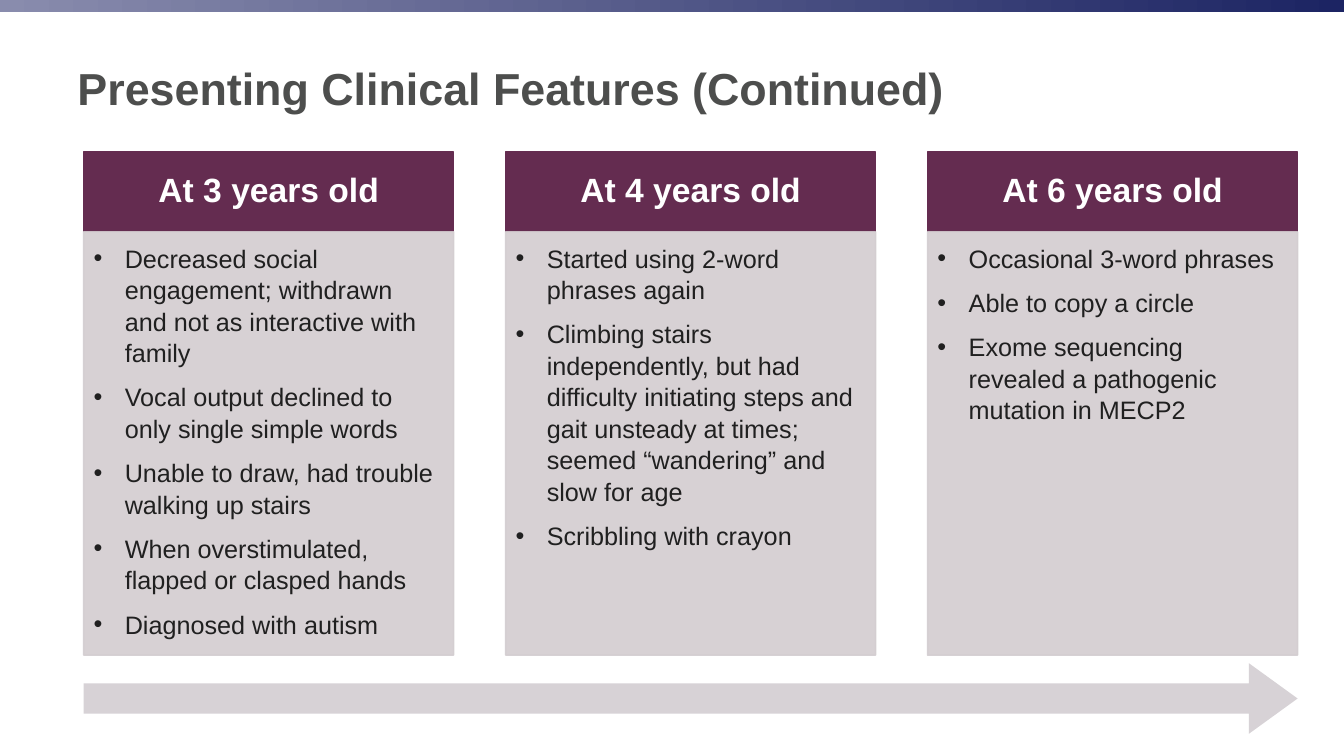
from lxml import etree
from pptx import Presentation
from pptx import util as u
from pptx.dml.color import RGBColor
from pptx.enum import shapes, text
from pptx.oxml.ns import qn

NAVY = RGBColor(0x1C, 0x24, 0x63)
LAVENDER = RGBColor(0x89, 0x8C, 0xAD)
TITLE_GREY = RGBColor(0x4D, 0x4E, 0x4D)
PLUM = RGBColor(0x64, 0x2C, 0x50)
PANEL_GREY = RGBColor(0xD3, 0xCD, 0xD0)
ARROW_GREY = RGBColor(0xD7, 0xD2, 0xD6)
INK = RGBColor(0x20, 0x20, 0x20)
WHITE = RGBColor(0xFF, 0xFF, 0xFF)

SLIDE_WIDTH, SLIDE_HEIGHT = 13.33, 7.5
LEFT, TOP, CONTENT_WIDTH, CONTENT_HEIGHT = 0.83, 1.51, 12.04, 4.99
COLUMN_WIDTH, HEADER_HEIGHT = 3.67, 0.79

AGES = [
    ("At 3 years old", [
        "Decreased social engagement; withdrawn and not as interactive with family",
        "Vocal output declined to only single simple words",
        "Unable to draw, had trouble walking up stairs",
        "When overstimulated, flapped or clasped hands",
        "Diagnosed with autism",
    ]),
    ("At 4 years old", [
        "Started using 2-word phrases again",
        "Climbing stairs independently, but had difficulty initiating steps and "
        "gait unsteady at times; seemed “wandering” and slow for age",
        "Scribbling with crayon",
    ]),
    ("At 6 years old", [
        "Occasional 3-word phrases",
        "Able to copy a circle",
        "Exome sequencing revealed a pathogenic mutation in MECP2",
    ]),
]


def add_block(slide, kind, box, color=None, outlined=False):
    shape = slide.shapes.add_shape(kind, *(u.Inches(length) for length in box))
    shape.shadow.inherit = False
    if color is not None:
        shape.fill.solid()
        shape.fill.fore_color.rgb = color
    if outlined:
        shape.line.color.rgb = color
        shape.line.width = u.Pt(1)
    else:
        shape.line.fill.background()
    return shape


def set_frame(shape, anchor, insets):
    frame = shape.text_frame
    frame.word_wrap = True
    frame.vertical_anchor = anchor
    (frame.margin_left, frame.margin_top,
     frame.margin_right, frame.margin_bottom) = (u.Inches(inset) for inset in insets)
    return frame


def write(paragraph, words, size, color, bold=False, align=text.PP_ALIGN.LEFT):
    paragraph.text = words
    paragraph.alignment = align
    font = paragraph.font
    font.name, font.size, font.bold = "Arial", u.Pt(size), bold
    font.color.rgb = color


def add_bullet(paragraph):
    properties = paragraph._p.get_or_add_pPr()
    properties.set("marL", str(u.Inches(0.31)))
    properties.set("indent", str(-u.Inches(0.31)))
    etree.SubElement(properties, qn("a:buFont")).set("typeface", "Arial")
    bullet = etree.SubElement(properties, qn("a:buChar"))
    bullet.set("char", "•")
    # Bullet settings come before the default run properties
    defaults = properties.find(qn("a:defRPr"))
    if defaults is not None:
        properties.append(defaults)


def set_opacity(shape, percent):
    for color in shape._element.spPr.iter(qn("a:srgbClr")):
        etree.SubElement(color, qn("a:alpha")).set("val", str(percent * 1000))


def add_top_band(slide, box):
    band = add_block(slide, shapes.MSO_SHAPE.RECTANGLE, box)
    band.fill.gradient()
    band.fill.gradient_angle = 0
    for stop, color in zip(band.fill.gradient_stops, (LAVENDER, NAVY)):
        stop.color.rgb = color


def add_title(slide, box):
    title = slide.shapes.add_textbox(*(u.Inches(length) for length in box))
    frame = set_frame(title, text.MSO_ANCHOR.MIDDLE, (0.1, 0.05, 0.1, 0.05))
    write(frame.paragraphs[0], "Presenting Clinical Features (Continued)",
          32, TITLE_GREY, bold=True)


def add_age_column(slide, box, heading, findings):
    left, top, width, height = box
    rectangle = shapes.MSO_SHAPE.RECTANGLE

    # Heading
    header = add_block(slide, rectangle, (left, top, width, HEADER_HEIGHT), PLUM, True)
    frame = set_frame(header, text.MSO_ANCHOR.MIDDLE, (0.14, 0.08, 0.14, 0.08))
    write(frame.paragraphs[0], heading, 24, WHITE, True, text.PP_ALIGN.CENTER)
    frame.paragraphs[0].line_spacing = 0.9

    # Findings
    panel_box = (left, top + HEADER_HEIGHT, width, height - HEADER_HEIGHT)
    panel = add_block(slide, rectangle, panel_box, PANEL_GREY, True)
    set_opacity(panel, 90)
    frame = set_frame(panel, text.MSO_ANCHOR.TOP, (0.1, 0.1, 0.14, 0.16))
    for index, finding in enumerate(findings):
        paragraph = frame.add_paragraph() if index else frame.paragraphs[0]
        write(paragraph, finding, 18, INK)
        paragraph.line_spacing = 1.04
        paragraph.space_after = u.Pt(9.2)
        add_bullet(paragraph)


def add_columns(slide, box):
    left, top, width, height = box
    step = (width - COLUMN_WIDTH) / (len(AGES) - 1)
    for index, (heading, findings) in enumerate(AGES):
        column_box = (left + index * step, top, COLUMN_WIDTH, height)
        add_age_column(slide, column_box, heading, findings)


def add_time_arrow(slide, box):
    arrow = add_block(slide, shapes.MSO_SHAPE.RIGHT_ARROW, box, ARROW_GREY)
    arrow.adjustments[0] = 0.43
    arrow.adjustments[1] = 0.69


def main():
    presentation = Presentation()
    presentation.slide_width = u.Inches(SLIDE_WIDTH)
    presentation.slide_height = u.Inches(SLIDE_HEIGHT)
    slide = presentation.slides.add_slide(presentation.slide_layouts[6])
    add_top_band(slide, (0, 0, SLIDE_WIDTH, 0.12))
    add_title(slide, (0.67, 0.22, 11.75, 1.3))
    add_columns(slide, (LEFT, TOP, CONTENT_WIDTH, CONTENT_HEIGHT))
    add_time_arrow(slide, (LEFT, 6.58, CONTENT_WIDTH, 0.7))
    presentation.save("out.pptx")


if __name__ == "__main__":
    main()
